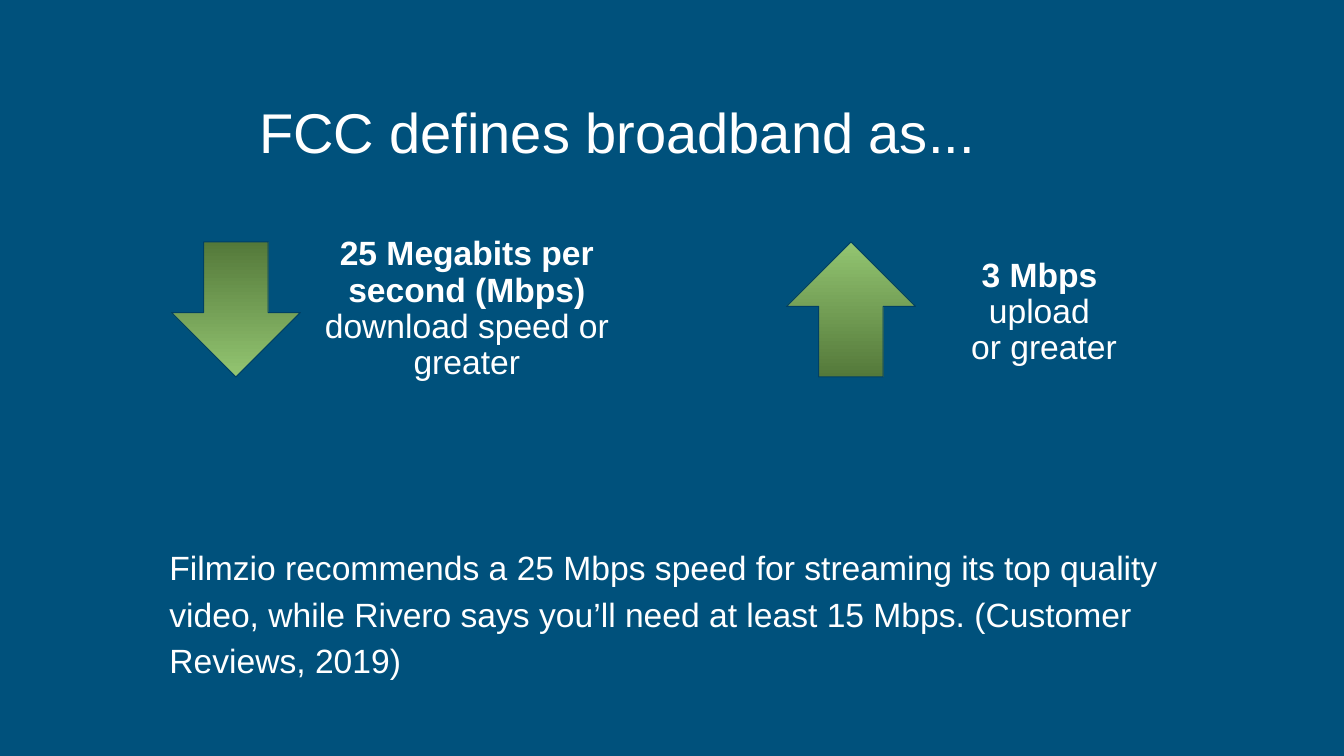
"""Build a slide on the broadband definition with download and upload speeds."""
from lxml.etree import SubElement
from pptx import Presentation
from pptx.dml.color import RGBColor
from pptx.enum.shapes import MSO_SHAPE as Preset
from pptx.enum.text import MSO_ANCHOR as Anchor, MSO_AUTO_SIZE as AutoSize, PP_ALIGN as Align
from pptx.oxml.ns import qn
from pptx.util import Inches, Pt


def color(hex_code):
    return RGBColor.from_string(hex_code)


def format_text(shape, size, anchor, inset, align, line_spacing, space_before=0):
    frame = shape.text_frame
    frame.word_wrap = True
    frame.auto_size = AutoSize.NONE
    frame.vertical_anchor = anchor
    frame.margin_left = frame.margin_right = Inches(inset)
    frame.margin_top = frame.margin_bottom = Inches(inset)
    for paragraph in frame.paragraphs:
        paragraph.alignment = align
        paragraph.line_spacing = line_spacing
        paragraph.space_before = Pt(space_before)
        for run in paragraph.runs:
            run.font.name = "Arial"
            run.font.size = Pt(size)
            run.font.color.rgb = color("FFFFFF")


deck = Presentation()
deck.slide_width, deck.slide_height = Inches(13.33), Inches(7.5)
slide = deck.slides.add_slide(deck.slide_layouts[1])
slide.background.fill.solid()
slide.background.fill.fore_color.rgb = color("00517C")

heading = slide.shapes.title
heading.left, heading.top = Inches(2.44), Inches(0.65)
heading.width, heading.height = Inches(9.91), Inches(1.11)
heading.text_frame.text = "FCC defines broadband as..."
format_text(heading, 40, Anchor.BOTTOM, 0.13, Align.LEFT, 1.0)

advice = slide.placeholders[1]
advice.left, advice.top = Inches(1.55), Inches(5.24)
advice.width, advice.height = Inches(10.57), Inches(1.65)
advice.text_frame.text = (
    "Filmzio recommends a 25 Mbps speed for streaming its top quality video, "
    "while Rivero says you’ll need at least 15 Mbps. (Customer Reviews, 2019)"
)
format_text(advice, 24, Anchor.TOP, 0.13, Align.LEFT, 1.15)
advice_props = advice.text_frame.paragraphs[0]._p.get_or_add_pPr()
advice_props.set("marL", "0")
advice_props.set("indent", "0")
SubElement(advice_props, qn("a:buNone"))

speeds = [
    (1.7, 180, 2.99, 1.43, 3.28, "25 Megabits per second (Mbps)", " download speed or greater"),
    (7.8, 0, 9.08, 1.46, 2.55, "3 Mbps \n", "upload \nor greater"),
]
for arrow_left, rotation, left, top, width, speed, detail in speeds:
    arrow = slide.shapes.add_shape(
        Preset.UP_ARROW, Inches(arrow_left), Inches(2.4), Inches(1.28), Inches(1.34))
    arrow.rotation = rotation
    arrow.shadow.inherit = False
    arrow.fill.gradient()
    arrow.fill.gradient_angle = 270
    for stop, shade in zip(arrow.fill.gradient_stops, ("93C571", "54793A")):
        stop.color.rgb = color(shade)
    arrow.line.color.rgb = color("004065")
    arrow.line.width = Pt(0.75)

    caption = slide.shapes.add_textbox(Inches(left), Inches(top), Inches(width), Inches(3.28))
    wording = caption.text_frame.paragraphs[0]
    wording.text = speed
    wording.runs[0].font.bold = True
    for index, line in enumerate(detail.split("\n")):
        if index:
            wording.add_line_break()
        wording.add_run().text = line
    format_text(caption, 24, Anchor.MIDDLE, 0.1, Align.CENTER, 0.9, 10)

deck.save("out.pptx")
